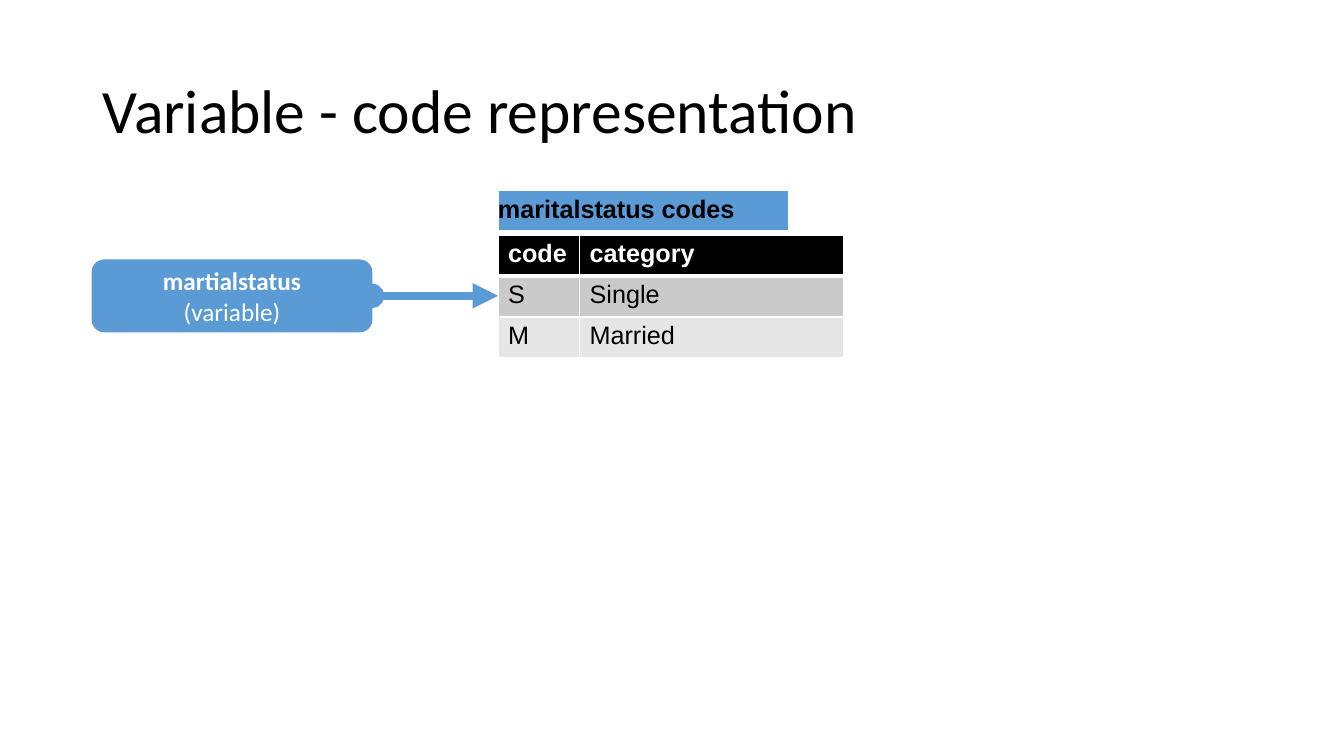
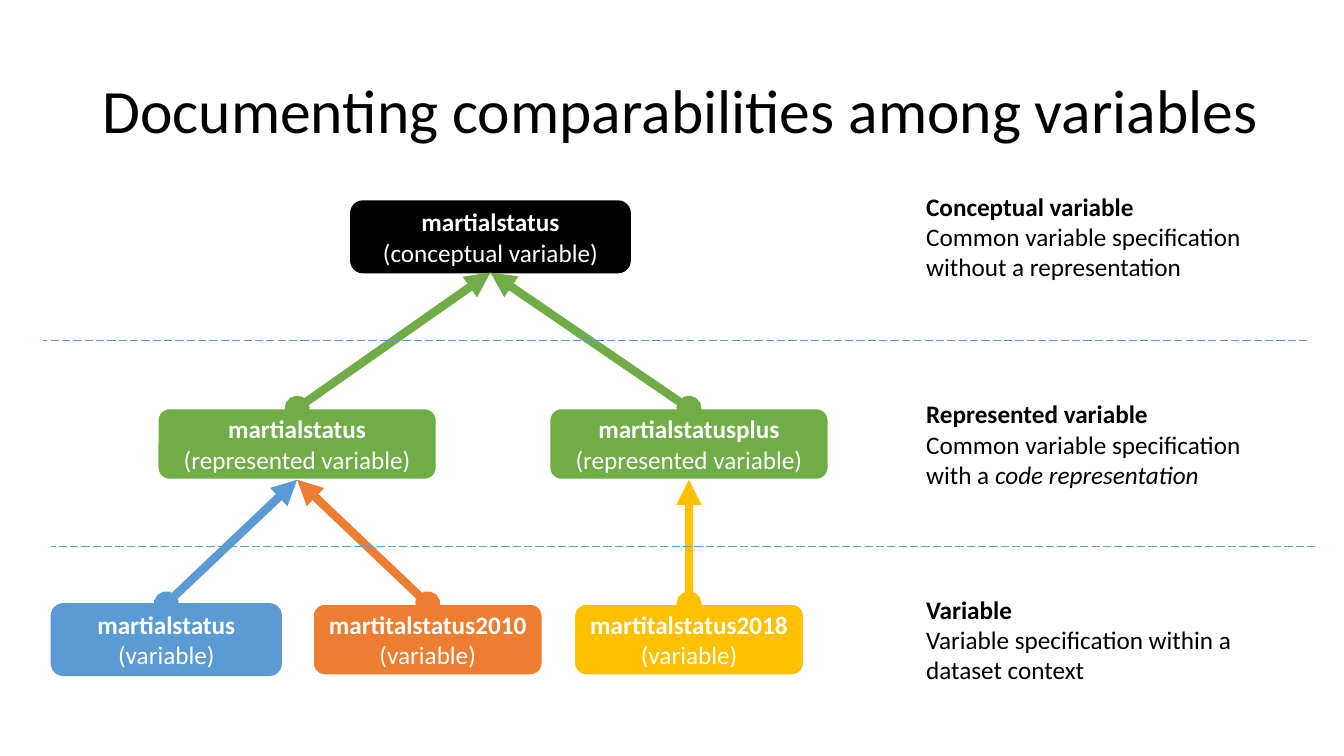
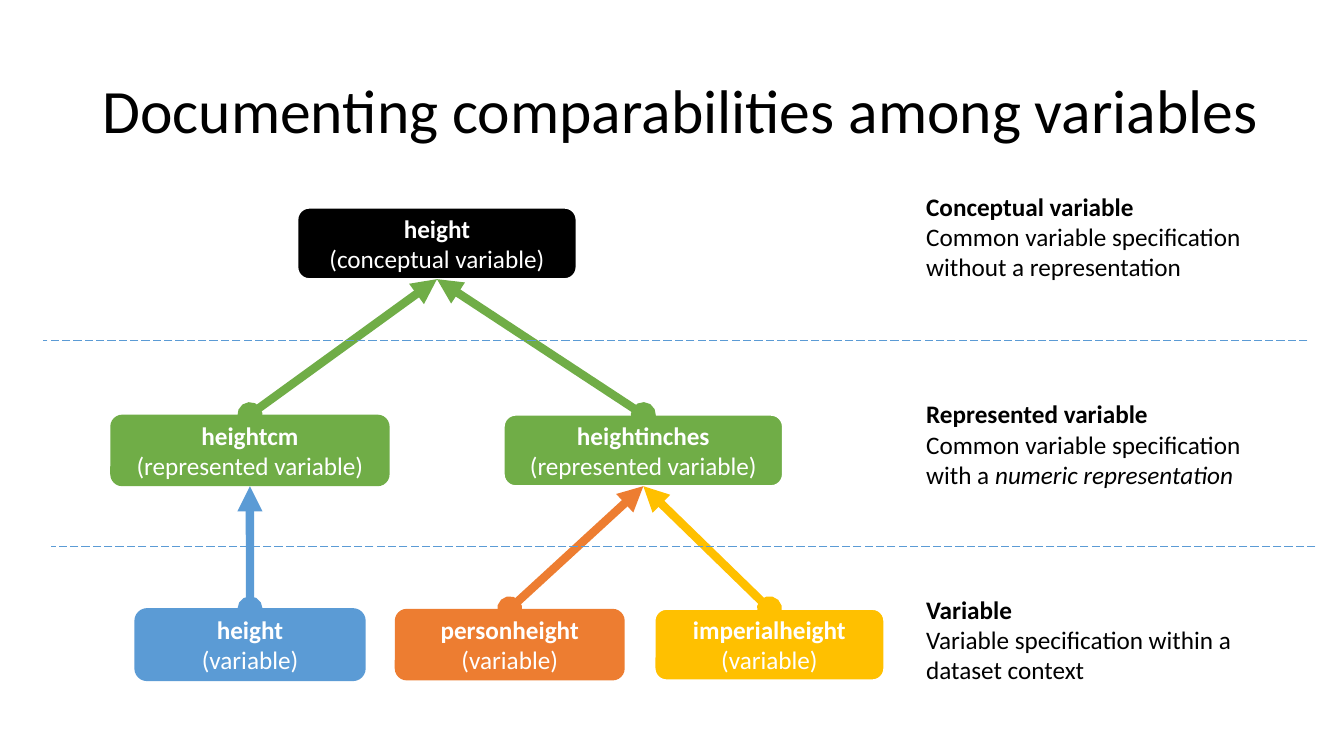
import lxml.etree
import pptx
import pptx.dml.color
import pptx.enum.dml
import pptx.enum.shapes
import pptx.enum.text
import pptx.oxml.ns
import pptx.util

Pt = pptx.util.Pt
qn = pptx.oxml.ns.qn
ANCHOR = pptx.enum.text.MSO_ANCHOR
ALIGN = pptx.enum.text.PP_ALIGN

COLORS = {
    "black": "000000",
    "white": "FFFFFF",
    "blue": "5B9BD5",
    "orange": "ED7D31",
    "green": "70AD47",
    "gold": "FFC000",
    "grey": "CACACA",
    "light": "E6E6E6",
}
OUTLINES = {"white": 1.5, "blue": 1, "black": 1}
TOP, BOTTOM, RIGHT = 0, 2, 3  # connection sites of a box
BOX_H = 51.1
WIDE, NARROW = 199.5, 164.2
ROW_H = 29.3


def rgb(name):
    return pptx.dml.color.RGBColor.from_string(COLORS[name])


class Deck:
    def __init__(self):
        self.prs = pptx.Presentation()
        self.prs.slide_width, self.prs.slide_height = Pt(960), Pt(540)
        self.slide = None

    def add_slide(self, title, width):
        self.slide = self.prs.slides.add_slide(self.prs.slide_layouts[5])
        sp = self.slide.shapes.title
        sp.left, sp.top, sp.width, sp.height = Pt(66), Pt(28.8), Pt(width), Pt(104.4)
        self.set_text(sp.text_frame, [[(title, "")]], size=44)
        sp.text_frame.paragraphs[0].line_spacing = 0.9

    def set_text(self, tf, paragraphs, color="black", size=18, font="Calibri",
                 align=ALIGN.LEFT):
        """Fill a frame; each paragraph is a list of (text, style), style from 'b' and 'i'."""
        tf.word_wrap = True
        tf.auto_size = pptx.enum.text.MSO_AUTO_SIZE.NONE
        tf.vertical_anchor = ANCHOR.MIDDLE
        for i, runs in enumerate(paragraphs):
            p = tf.add_paragraph() if i else tf.paragraphs[0]
            p.alignment = align
            for text, style in runs:
                r = p.add_run()
                r.text = text
                r.font.name, r.font.size = font, Pt(size)
                r.font.bold, r.font.italic = "b" in style, "i" in style
                r.font.color.rgb = rgb(color)

    def box(self, name, kind, left, top, width, fill, outline="white"):
        sp = self.slide.shapes.add_shape(
            pptx.enum.shapes.MSO_SHAPE.ROUNDED_RECTANGLE,
            Pt(left), Pt(top), Pt(width), Pt(BOX_H))
        sp.shadow.inherit = False
        sp.fill.solid()
        sp.fill.fore_color.rgb = rgb(fill)
        if outline:
            sp.line.color.rgb = rgb(outline)
            sp.line.width = Pt(OUTLINES[outline])
        else:
            sp.line.fill.background()
        self.set_text(sp.text_frame, [[(name, "b")], [(f"({kind})", "")]],
                      "white", align=ALIGN.CENTER)
        return sp

    def line(self, x1, y1, x2, y2, color, width):
        cn = self.slide.shapes.add_connector(
            pptx.enum.shapes.MSO_CONNECTOR.STRAIGHT, Pt(x1), Pt(y1), Pt(x2), Pt(y2))
        cn.line.color.rgb = rgb(color)
        cn.line.width = Pt(width)
        lxml.etree.SubElement(cn.element.spPr, qn("a:effectLst"))
        return cn

    def divider(self, x1, x2, y):
        cn = self.line(x1, y, x2, y, "blue", 0.75)
        cn.line.dash_style = pptx.enum.dml.MSO_LINE.LONG_DASH

    def arrow(self, color, x=0, y=0):
        """Thick arrow with a round tail, ending at x, y until it is connected."""
        cn = self.line(x, y, x, y, color, 6)
        ln = cn.element.spPr.find(qn("a:ln"))
        for tag, kind in (("a:headEnd", "oval"), ("a:tailEnd", "triangle")):
            lxml.etree.SubElement(ln, qn(tag), type=kind)
        return cn

    def link(self, child, parent, color):
        cn = self.arrow(color)
        cn.begin_connect(child, TOP)
        cn.end_connect(parent, BOTTOM)

    def note(self, top, heading, *runs):
        sp = self.slide.shapes.add_textbox(Pt(654.5), Pt(top), Pt(249.1), Pt(87.1))
        self.set_text(sp.text_frame, [[(heading, "b")], list(runs)])

    def table(self, left, top, widths, rows):
        """Each row is (texts, fill, text colour, style); the first is the header."""
        tbl = self.slide.shapes.add_table(
            len(rows), len(widths), Pt(left), Pt(top),
            Pt(sum(widths)), Pt(ROW_H * len(rows))).table
        for col, width in zip(tbl.columns, widths):
            col.width = Pt(width)
        for i, (texts, fill, color, style) in enumerate(rows):
            tbl.rows[i].height = Pt(ROW_H)
            for j, text in enumerate(texts):
                cell = tbl.cell(i, j)
                self.borders(cell, top=3 if i == 1 else 1, bottom=1 if i else 3)
                cell.fill.solid()
                cell.fill.fore_color.rgb = rgb(fill)
                self.set_text(cell.text_frame, [[(text, style)]], color, font="Arial")
                cell.vertical_anchor = ANCHOR.TOP
        return tbl

    def borders(self, cell, top, bottom):
        tc_pr = cell._tc.get_or_add_tcPr()
        for side, width in (("L", 1), ("R", 1), ("T", top), ("B", bottom)):
            ln = lxml.etree.SubElement(tc_pr, qn(f"a:ln{side}"), w=str(Pt(width)))
            fill = lxml.etree.SubElement(ln, qn("a:solidFill"))
            lxml.etree.SubElement(fill, qn("a:srgbClr"), val=COLORS["white"])

    def hierarchy(self, representation, concept, represented, variables):
        """Three levels of boxes, each variable linked to the parent it names by index."""
        self.add_slide("Documenting comparabilities among variables", 853.2)
        name, left, top, outline = concept
        root = self.box(name, "conceptual variable", left, top, WIDE, "black", outline)
        parents = []
        for name, left, top, outline in represented:
            sp = self.box(name, "represented variable", left, top, WIDE, "green", outline)
            self.link(sp, root, "green")
            parents.append(sp)
        for name, left, top, color, outline, parent in variables:
            sp = self.box(name, "variable", left, top, NARROW, color, outline)
            self.link(sp, parents[parent], color)
        self.divider(933.8, 31, 243.4)
        self.divider(939.6, 36.7, 390.2)
        self.note(125.3, "Conceptual variable",
                  ("Common variable specification without a representation", ""))
        self.note(273.6, "Represented variable",
                  ("Common variable specification with a ", ""),
                  (f"{representation} representation", "i"))
        self.note(413.3, "Variable",
                  ("Variable specification within a dataset context", ""))


def code_slide(deck):
    deck.add_slide("Variable - code representation", 828)
    left = 355.7
    deck.table(left, 167.8, [58.3, 188.6], [
        (["code", "category"], "black", "white", "b"),
        (["S", "Single"], "grey", "black", ""),
        (["M", "Married"], "light", "black", ""),
    ])
    label = deck.table(left, 136.1, [207.4],
                       [(["maritalstatus codes"], "blue", "black", "b")])
    label.cell(0, 0).margin_left = 0
    top = 185.8
    sp = deck.box("martialstatus", "variable", 66, top, WIDE, "blue", "blue")
    deck.arrow("blue", left, top + BOX_H / 2).begin_connect(sp, RIGHT)


def main():
    deck = Deck()
    code_slide(deck)
    deck.hierarchy(
        "code",
        ("martialstatus", 250.6, 143.6, "black"),
        [("martialstatus", 112.5, 291.6, "white"),
         ("martialstatusplus", 392.4, 291.6, "white")],
        [("martialstatus", 36.7, 431.3, "blue", "blue", 0),
         ("martitalstatus2010", 223.4, 431.3, "orange", "white", 0),
         ("martitalstatus2018", 410.1, 431.3, "gold", "white", 1)])
    deck.hierarchy(
        "numeric",
        ("height", 212.4, 148.3, "white"),
        [("heightcm", 78.8, 296.2, None),
         ("heightinches", 359.8, 296.2, "white")],
        [("height", 96.5, 434.9, "blue", "blue", 0),
         ("personheight", 282, 434.9, "orange", None, 1),
         ("imperialheight", 467.5, 434.9, "gold", "white", 1)])
    deck.prs.save("out.pptx")


if __name__ == "__main__":
    main()
